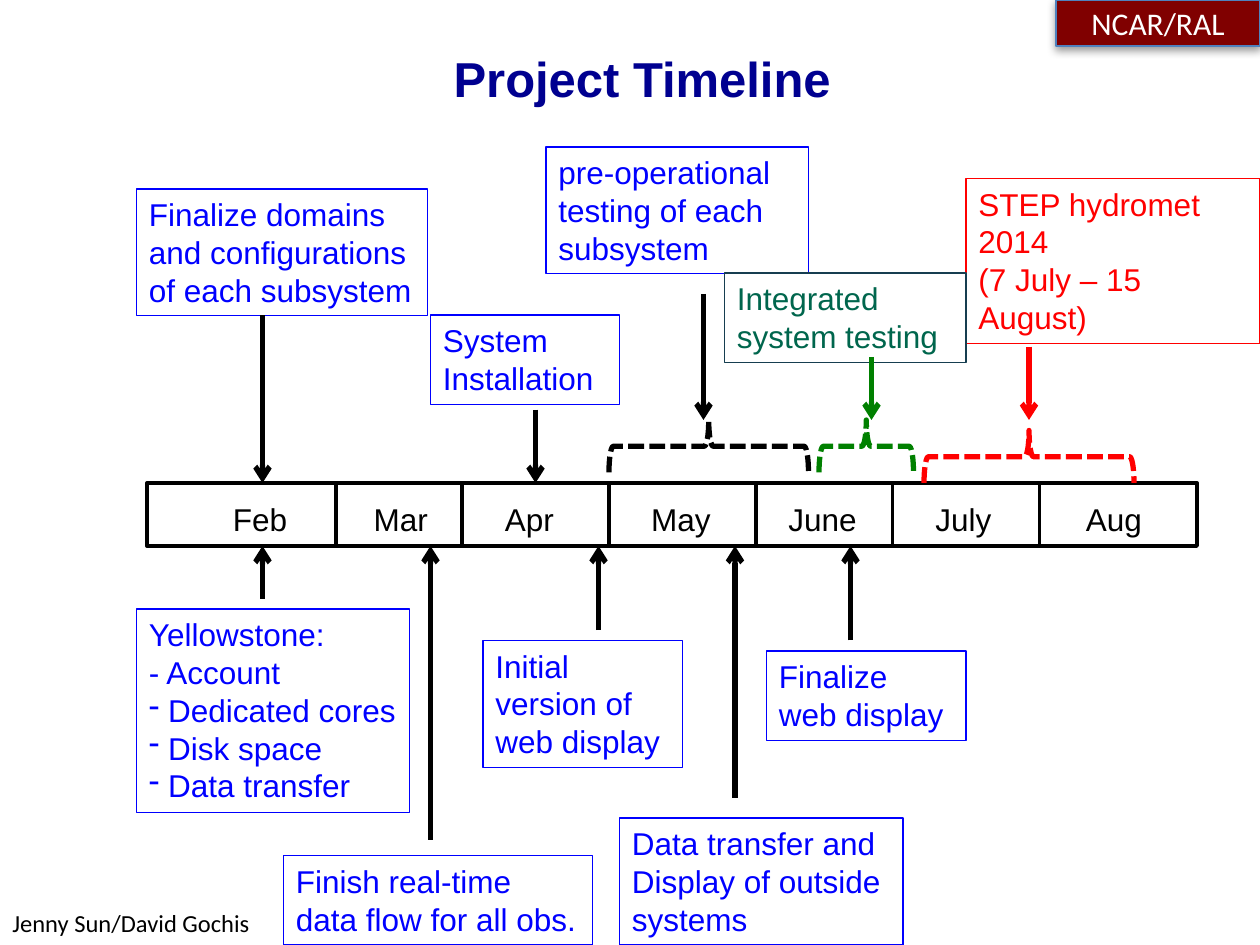
from lxml import etree
from pptx import Presentation
from pptx.dml.color import RGBColor
from pptx.enum.dml import MSO_LINE
from pptx.enum.shapes import MSO_CONNECTOR, MSO_SHAPE
from pptx.enum.text import MSO_ANCHOR, MSO_AUTO_SIZE, PP_ALIGN
from pptx.oxml.ns import qn
from pptx.util import Pt

BLACK = RGBColor(0, 0, 0)
WHITE = RGBColor(255, 255, 255)
BLUE = RGBColor(0, 0, 255)
NAVY = RGBColor(0, 0, 0x90)
RED = RGBColor(255, 0, 0)
GREEN = RGBColor(0, 0x80, 0)
TEAL = RGBColor(0, 0x66, 0x4D)
SLATE = RGBColor(0x16, 0x3E, 0x50)
MAROON = RGBColor(0x80, 0, 0)
STEEL = RGBColor(0x4F, 0x81, 0xBD)

RECT, BRACE = MSO_SHAPE.RECTANGLE, MSO_SHAPE.LEFT_BRACE
STRAIGHT, DASH = MSO_CONNECTOR.STRAIGHT, MSO_LINE.SQUARE_DOT
LEFT, CENTER = PP_ALIGN.LEFT, PP_ALIGN.CENTER
TOP, MIDDLE = MSO_ANCHOR.TOP, MSO_ANCHOR.MIDDLE
GROW, FIXED = MSO_AUTO_SIZE.SHAPE_TO_FIT_TEXT, MSO_AUTO_SIZE.NONE

BAR_TOP, BAR_BOTTOM = 276, 312
BAR_LEFT, BAR_RIGHT = 84, 684
DIVIDERS = [192, 264, 348, 432, 510, 594]
MONTHS = ["Feb", "Mar", "Apr", "May", "June", "July", "Aug"]
MONTH_TABS = [80.5, 155.5, 239, 317.5, 401.5, 487.5]
BULLET_INDENT = 11

NOTES = [
    (78, 108, 166.5, 72.5, False,
     ["Finalize domains", "and configurations", "of each subsystem"]),
    (312, 84, 150, 72.5, True, ["pre-operational", "testing of each subsystem"]),
    (246, 180, 108, 51, True, ["System", "Installation"]),
    (162, 489, 176.5, 51, False, ["Finish real-time", "data flow for all obs."]),
    (276, 366, 114, 72.5, True, ["Initial version of", "web display"]),
    (438, 372, 114, 51, True, ["Finalize", "web display"]),
    (354, 467.5, 162, 72.5, True, ["Data transfer and", "Display of outside systems"]),
]

ARROWS = [
    (150, 180, BAR_TOP, BLACK), (306, 234, BAR_TOP, BLACK),
    (402, 168, 240, BLACK), (498, 204, 240, GREEN), (588, 198, 240, RED),
    (150, 342, BAR_BOTTOM, BLACK), (246, 480, BAR_BOTTOM, BLACK),
    (342, 360, BAR_BOTTOM, BLACK), (420, 456, BAR_BOTTOM, BLACK),
    (486, 366, BAR_BOTTOM, BLACK),
]

BRACES = [(348, 240, 114, BLACK), (468, 240, 54, GREEN), (528, 246, 120, RED)]


def write(sp, lines, size=18, font="Arial", color=BLACK, bold=False,
          align=LEFT, anchor=TOP, wrap=True, fit=GROW):
    tf = sp.text_frame
    tf.word_wrap, tf.auto_size, tf.vertical_anchor = wrap, fit, anchor
    for i, line in enumerate(lines):
        p = tf.add_paragraph() if i else tf.paragraphs[0]
        p.alignment = align
        r = p.add_run()
        r.text = line
        r.font.size, r.font.name, r.font.bold = Pt(size), font, bold
        r.font.color.rgb = color
    return sp


def place(sp, left, top, width, height):
    sp.left, sp.top, sp.width, sp.height = Pt(left), Pt(top), Pt(width), Pt(height)


def add_text(s, left, top, width, height, lines, border=None, **fmt):
    sp = s.shapes.add_textbox(Pt(left), Pt(top), Pt(width), Pt(height))
    if border is not None:
        sp.line.color.rgb, sp.line.width = border, Pt(0.75)
    return write(sp, lines, **fmt)


def add_shape(s, kind, left, top, width, height, line, weight, fill=None):
    sp = s.shapes.add_shape(kind, Pt(left), Pt(top), Pt(width), Pt(height))
    sp.shadow.inherit = False
    sp.line.color.rgb, sp.line.width = line, Pt(weight)
    if fill is None:
        sp.fill.background()
    else:
        sp.fill.solid()
        sp.fill.fore_color.rgb = fill
    return sp


def add_line(s, x, y1, y2, color, weight, arrow=False):
    cn = s.shapes.add_connector(STRAIGHT, Pt(x), Pt(y1), Pt(x), Pt(y2))
    cn.line.color.rgb, cn.line.width = color, Pt(weight)
    if arrow:
        etree.SubElement(cn.line._get_or_add_ln(), qn("a:tailEnd"), type="arrow")
    etree.SubElement(cn._element.spPr, qn("a:effectLst"))


def add_brace(s, left, top, span, color, depth=30):
    x, y = left + (span - depth) / 2, top - (span - depth) / 2
    sp = add_shape(s, BRACE, x, y, depth, span, color, 3)
    sp.rotation = 90
    sp.line.dash_style = DASH


def add_shadow(sp):
    effects = sp._element.spPr.find(qn("a:effectLst"))
    shadow = etree.SubElement(effects, qn("a:outerShdw"), blurRad=str(Pt(5)),
                              dist=str(Pt(2)), dir="5400000", rotWithShape="0")
    color = etree.SubElement(shadow, qn("a:srgbClr"), val="000000")
    etree.SubElement(color, qn("a:alpha"), val="40000")


def add_bullet(p):
    pPr = p._p.get_or_add_pPr()
    pPr.set("marL", str(Pt(BULLET_INDENT)))
    pPr.set("indent", str(-Pt(BULLET_INDENT)))
    etree.SubElement(pPr, qn("a:buChar"), char="-")


def add_tabs(p, stops):
    tabs = etree.SubElement(p._p.get_or_add_pPr(), qn("a:tabLst"))
    for stop in stops:
        etree.SubElement(tabs, qn("a:tab"), pos=str(Pt(stop)), algn="l")


def add_month_bar(s):
    add_shape(s, RECT, BAR_LEFT, BAR_TOP, BAR_RIGHT - BAR_LEFT,
              BAR_BOTTOM - BAR_TOP, BLACK, 2.25)
    for x in DIVIDERS:
        add_line(s, x, BAR_TOP, BAR_BOTTOM, BLACK, 2.25)
    sp = add_text(s, 126, 282, 540, 29, ["\t".join(MONTHS)])
    add_tabs(sp.text_frame.paragraphs[0], MONTH_TABS)


def add_notes(s):
    for left, top, width, height, wrap, lines in NOTES:
        add_text(s, left, top, width, height, lines, border=BLUE, color=BLUE, wrap=wrap)
    sp = add_text(s, 78, 348, 156, 116.5,
                  ["Yellowstone:", "- Account", "Dedicated cores", "Disk space",
                   "Data transfer"], border=BLUE, color=BLUE, wrap=False)
    for p in sp.text_frame.paragraphs[2:]:
        add_bullet(p)
    add_text(s, 552, 102, 168, 94.5, ["STEP hydromet", "2014", "(7 July – 15 August)"],
             border=RED, color=RED)
    add_text(s, 414, 156, 138, 51, ["Integrated system testing"],
             border=SLATE, color=TEAL)


def main():
    prs = Presentation()
    prs.slide_width, prs.slide_height = Pt(720), Pt(540)
    s = prs.slides.add_slide(prs.slide_layouts[5])

    title = s.shapes.title
    place(title, 252, 24, 232.5, 41)
    write(title, ["Project Timeline"], size=28, color=NAVY, bold=True, wrap=False)

    add_month_bar(s)
    add_notes(s)
    for x, start, end, color in ARROWS:
        add_line(s, x, start, end, color, 3, arrow=True)
    for brace in BRACES:
        add_brace(s, *brace)

    badge = add_shape(s, RECT, 603.5, 0, 116.5, 26.5, STEEL, 1, fill=MAROON)
    add_shadow(badge)
    write(badge, ["NCAR/RAL"], font="Calibri", color=WHITE, align=CENTER,
          anchor=MIDDLE, fit=FIXED)
    add_text(s, 0, 515.5, 177, 24.5, ["Jenny Sun/David Gochis"], size=14,
             font="Calibri", wrap=False)
    prs.save("out.pptx")


if __name__ == "__main__":
    main()
